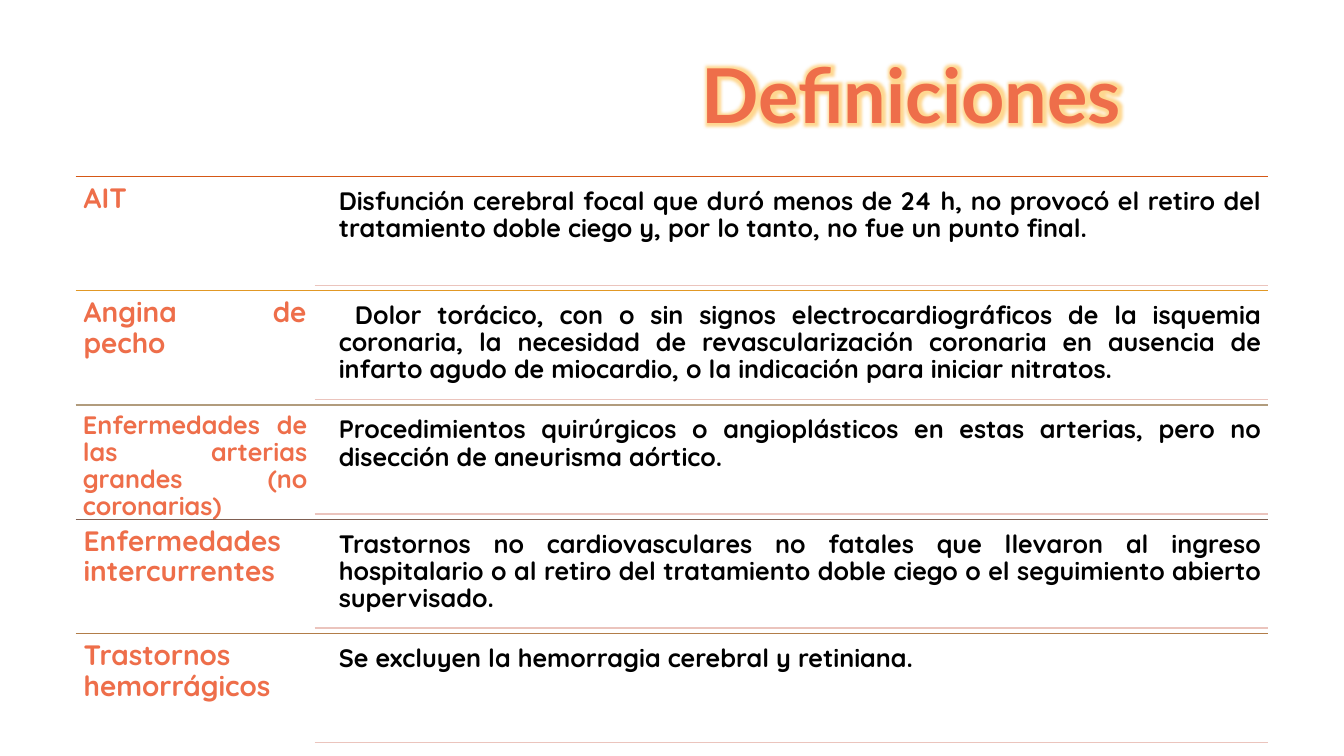
import pptx
import pptx.dml.color
import pptx.enum.shapes
import pptx.enum.text
import pptx.oxml
import pptx.oxml.ns
import pptx.util
from lxml import etree

Inches = pptx.util.Inches
Pt = pptx.util.Pt
ALIGN = pptx.enum.text.PP_ALIGN
ANCHOR = pptx.enum.text.MSO_ANCHOR

WIDTH, HEIGHT = 13.33, 7.5
LEFT, RIGHT = 0.75, 12.58
TERM_WIDTH = 2.37
TEXT_LEFT = 3.29
TOP, ROW_HEIGHT = 1.75, 1.134
TEXT_OFFSET, TEXT_HEIGHT = 0.05, 1.03
ORANGE, BLACK, PALE_ROSE = "EE6E4A", "000000", "EBC4BD"

# term, term size, rule colour, definition, first-line indent
DEFINITIONS = [
    ("AIT", 20, "D55816",
     "Disfunción cerebral focal que duró menos de 24 h, no provocó el retiro del "
     "tratamiento doble ciego y, por lo tanto, no fue un punto final.", 0),
    ("Angina de pecho", 20, "E19825",
     "Dolor torácico, con o sin signos electrocardiográficos de la isquemia "
     "coronaria, la necesidad de revascularización coronaria en ausencia de infarto "
     "agudo de miocardio, o la indicación para iniciar nitratos.", 0.16),
    ("Enfermedades de las arterias grandes (no coronarias)", 18, "B19C7D",
     "Procedimientos quirúrgicos o angioplásticos en estas arterias, pero no "
     "disección de aneurisma aórtico.", 0),
    ("Enfermedades intercurrentes", 20, "7F5F52",
     "Trastornos no cardiovasculares no fatales que llevaron al ingreso hospitalario "
     "o al retiro del tratamiento doble ciego o el seguimiento abierto supervisado.", 0),
    ("Trastornos hemorrágicos", 20, "B27D49",
     "Se excluyen la hemorragia cerebral y retiniana.", 0),
]


def rgb(value):
    return pptx.dml.color.RGBColor.from_string(value)


def add_rule(slide, left, y, color):
    """Draw a horizontal line from left to the right margin."""
    rule = slide.shapes.add_connector(
        pptx.enum.shapes.MSO_CONNECTOR.STRAIGHT,
        Inches(left), Inches(y), Inches(RIGHT), Inches(y))
    rule.line.color.rgb = rgb(color)
    rule.line.width = Pt(1)
    etree.SubElement(rule._element.spPr, pptx.oxml.ns.qn("a:effectLst"))


def add_text(slide, box, text, size, color, font="Quicksand", inset=0.07,
             align=ALIGN.JUSTIFY, anchor=ANCHOR.TOP, line_spacing=0.9, indent=0):
    shape = slide.shapes.add_textbox(*map(Inches, box))
    frame = shape.text_frame
    frame.word_wrap = True
    frame.vertical_anchor = anchor
    frame.margin_left = frame.margin_right = Inches(inset)
    frame.margin_top = frame.margin_bottom = Inches(inset)
    paragraph = frame.paragraphs[0]
    paragraph.text = text
    paragraph.alignment = align
    paragraph.line_spacing = line_spacing
    if indent:
        paragraph._p.get_or_add_pPr().set("indent", str(Inches(indent)))
    paragraph.font.name = font
    paragraph.font.size = Pt(size)
    paragraph.font.bold = True
    paragraph.font.color.rgb = rgb(color)
    return paragraph


def add_glow(paragraph, color, radius, opacity):
    """Put a soft halo around the letters; opacity is a percentage."""
    effects = pptx.oxml.parse_xml(
        f'<a:effectLst {pptx.oxml.ns.nsdecls("a")}><a:glow rad="{Pt(radius)}">'
        f'<a:srgbClr val="{color}"><a:alpha val="{opacity * 1000}"/></a:srgbClr>'
        '</a:glow></a:effectLst>')
    paragraph.runs[0].font._element.append(effects)


def add_definition(slide, row, term, term_size, rule_color, definition, indent):
    top = TOP + row * ROW_HEIGHT
    text_top = top + TEXT_OFFSET
    add_rule(slide, LEFT, top, rule_color)
    add_text(slide, (LEFT, top, TERM_WIDTH, ROW_HEIGHT), term, term_size, ORANGE,
             inset=term_size * 0.004)
    add_text(slide, (TEXT_LEFT, text_top, RIGHT - TEXT_LEFT, TEXT_HEIGHT),
             definition, 18, BLACK, indent=indent)
    add_rule(slide, LEFT + TERM_WIDTH, text_top + TEXT_HEIGHT, PALE_ROSE)


def main():
    presentation = pptx.Presentation()
    presentation.slide_width = Inches(WIDTH)
    presentation.slide_height = Inches(HEIGHT)
    slide = presentation.slides.add_slide(presentation.slide_layouts[6])

    for row, definition in enumerate(DEFINITIONS):
        add_definition(slide, row, *definition)

    title = add_text(slide, (4.77, 0.49, 8.54, 0.87), "Definiciones", 54, ORANGE,
                     font="Lato", inset=0.05, align=ALIGN.CENTER,
                     anchor=ANCHOR.MIDDLE, line_spacing=1)
    add_glow(title, "FFBD47", radius=8, opacity=60)

    presentation.save("out.pptx")


if __name__ == "__main__":
    main()
